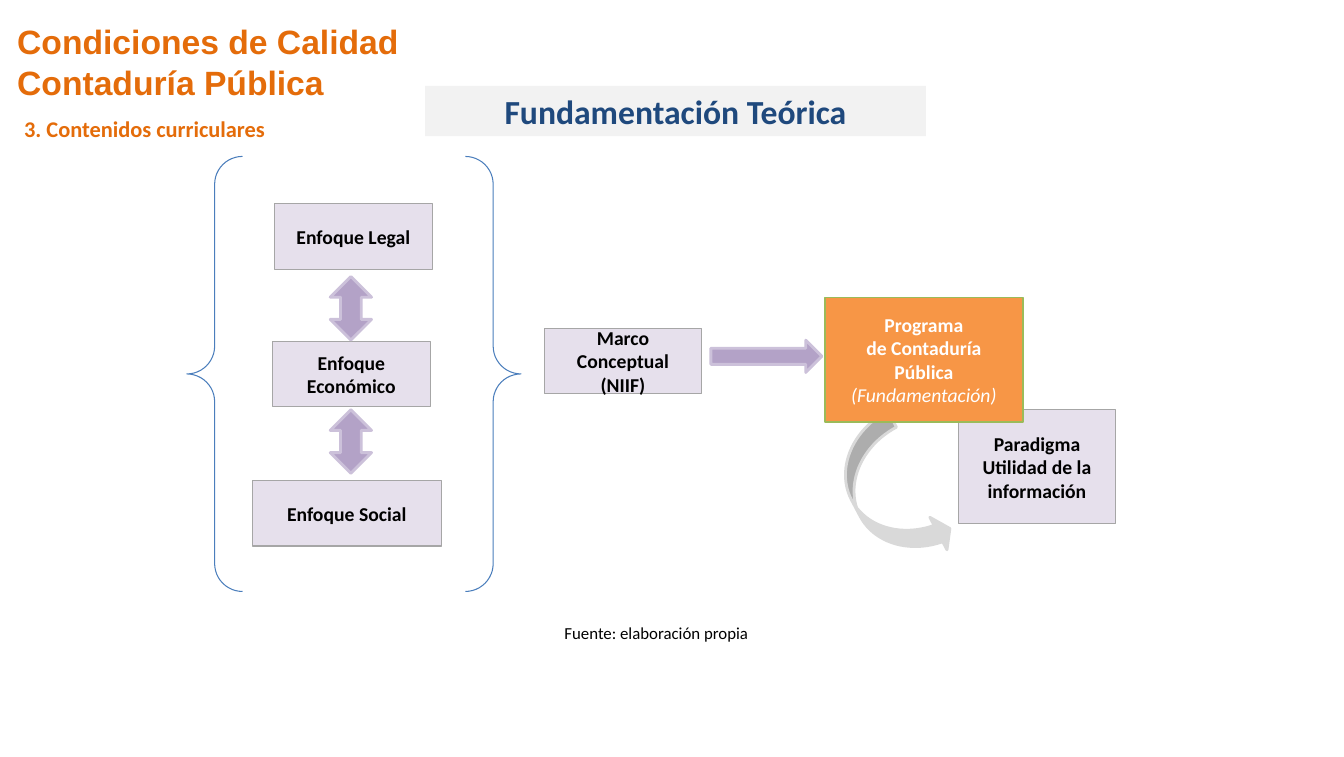
from dataclasses import dataclass

from pptx import Presentation
from pptx.dml.color import RGBColor
from pptx.enum.shapes import MSO_SHAPE as Kind
from pptx.enum.text import MSO_ANCHOR as Anchor, MSO_AUTO_SIZE as Fit, PP_ALIGN as Align
from pptx.util import Inches, Pt

ORANGE = "E46C0A"
LILAC = "E6E0EC"
GREY = "D9D9D9"


@dataclass
class Box:
    text: str
    left: float
    top: float
    width: float = 1.56
    height: float = 0.65
    fill: str = LILAC
    line: str = "A6A6A6"
    weight: float = 0.75
    color: str = "000000"


@dataclass
class Arrow:
    kind: Kind
    left: float
    top: float
    width: float
    height: float
    fill: str = "B3A2C7"
    line: str = "CCC1DA"


def rgb(code: str) -> RGBColor:
    return RGBColor.from_string(code)


def place(shape, left: float, top: float, width: float, height: float) -> None:
    shape.left, shape.top = Inches(left), Inches(top)
    shape.width, shape.height = Inches(width), Inches(height)


def write(shape, text: str, size: float, color: str, bold: bool = True,
          align: Align = Align.LEFT, anchor: Anchor = Anchor.TOP,
          face: str = "Calibri") -> None:
    frame = shape.text_frame
    frame.text = text
    frame.word_wrap = True
    frame.auto_size = Fit.NONE
    frame.vertical_anchor = anchor
    for para in frame.paragraphs:
        para.alignment = align
        for run in para.runs:
            font = run.font
            font.name, font.size, font.bold = face, Pt(size), bold
            font.color.rgb = rgb(color)


def add_form(slide, kind: Kind, left: float, top: float, width: float, height: float,
             fill: str = "", line: str = "", weight: float = 2):
    """Add a preset shape; an empty fill or line means none."""
    form = slide.shapes.add_shape(kind, Inches(left), Inches(top),
                                  Inches(width), Inches(height))
    form.shadow.inherit = False
    if fill:
        form.fill.solid()
        form.fill.fore_color.rgb = rgb(fill)
    else:
        form.fill.background()
    if line:
        form.line.color.rgb = rgb(line)
        form.line.width = Pt(weight)
    else:
        form.line.fill.background()
    return form


def add_label(slide, text: str, left: float, top: float, width: float, height: float,
              size: float, color: str, bold: bool = True):
    label = slide.shapes.add_textbox(Inches(left), Inches(top),
                                     Inches(width), Inches(height))
    write(label, text, size, color, bold)
    return label


def add_box(slide, box: Box):
    form = add_form(slide, Kind.RECTANGLE, box.left, box.top, box.width, box.height,
                    box.fill, box.line, box.weight)
    write(form, box.text, 14, box.color, align=Align.CENTER, anchor=Anchor.MIDDLE)
    return form


def add_arrow(slide, arrow: Arrow):
    return add_form(slide, arrow.kind, arrow.left, arrow.top, arrow.width,
                    arrow.height, arrow.fill, arrow.line)


BOXES = [
    Box("Enfoque Social", 2.5, 4.76, width=1.87),
    Box("Enfoque Legal", 2.72, 2.02),
    Box("Enfoque Económico", 2.7, 3.38),
    Box("Marco Conceptual (NIIF)", 5.39, 3.25),
    Box("Paradigma Utilidad de la información", 9.49, 4.06, height=1.13),
]
PROGRAM = Box("Programa\nde Contaduría Pública\n(Fundamentación)", 8.17, 2.95, 1.96, 1.23,
              "F79646", "9BBB59", 1, "FFFFFF")
CURVE = Arrow(Kind.CURVED_UP_ARROW, 8.07, 4.54, 1.5, 0.73, GREY, GREY)
ARROWS = [
    Arrow(Kind.UP_DOWN_ARROW, 3.27, 2.74, 0.41, 0.63),
    Arrow(Kind.UP_DOWN_ARROW, 3.27, 4.06, 0.41, 0.63),
    Arrow(Kind.RIGHT_ARROW, 7.04, 3.37, 1.1, 0.32),
]


def main() -> None:
    deck = Presentation()
    deck.slide_width, deck.slide_height = Inches(13.31), Inches(7.5)
    slide = deck.slides.add_slide(deck.slide_layouts[5])

    title = slide.shapes.title
    place(title, 0.07, -0.06, 6.63, 1.34)
    write(title, "Condiciones de Calidad\nContaduría Pública", 24, ORANGE,
          anchor=Anchor.MIDDLE, face="Arial")

    banner = add_form(slide, Kind.RECTANGLE, 4.21, 0.85, 4.96, 0.5, "F2F2F2")
    write(banner, "Fundamentación Teórica", 24, "1F497D", align=Align.CENTER)
    add_label(slide, "3. Contenidos curriculares", 0.14, 1.09, 6.38, 0.37, 16, ORANGE)

    curve = add_arrow(slide, CURVE)
    curve.rotation = 62.2
    curve.adjustments[2] = 0.17

    for box in BOXES:
        add_box(slide, box)
    program = add_box(slide, PROGRAM)
    note = program.text_frame.paragraphs[-1].runs[0].font
    note.bold, note.italic = False, True

    source = add_label(slide, "Fuente: elaboración propia", 5.39, 6.09, 2.3, 0.33,
                       12, "000000", bold=False)
    source.text_frame.margin_left = Inches(0.2)
    source.text_frame.paragraphs[0].line_spacing = 1.15

    for arrow in ARROWS:
        add_arrow(slide, arrow)
    add_form(slide, Kind.DOUBLE_BRACE, 1.85, 1.55, 3.31, 4.31, line="4B7EBC", weight=0.75)

    deck.save("out.pptx")


if __name__ == "__main__":
    main()
